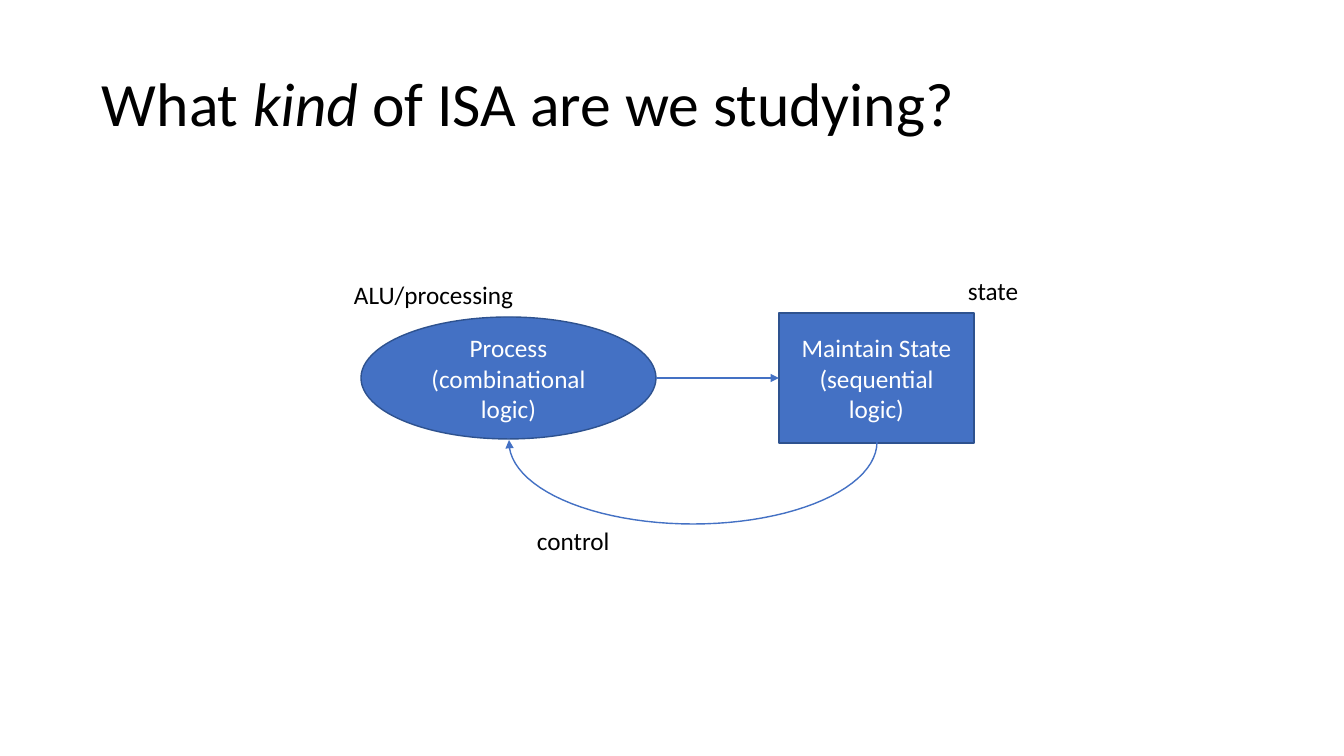
"""Build a slide showing the loop between combinational logic and state."""
import math
from lxml import etree
from pptx import Presentation, util as u
from pptx.dml.color import RGBColor
from pptx.enum import shapes, text
from pptx.oxml.ns import qn

PX = u.Inches(1) / 100.8
BLUE = RGBColor(0x44, 0x71, 0xC4)
NAVY = RGBColor(0x2E, 0x52, 0x8F)
BLACK = RGBColor(0, 0, 0)
WHITE = RGBColor(255, 255, 255)


def px(*lengths):
    return [u.Emu(round(length * PX)) for length in lengths]


def style_arrow(arrow):
    arrow.line.color.rgb = BLUE
    arrow.line.width = u.Pt(1)
    properties = arrow._element.spPr
    etree.SubElement(properties.find(qn("a:ln")), qn("a:tailEnd"), type="triangle")
    etree.SubElement(properties, qn("a:effectLst"))


presentation = Presentation()
presentation.slide_width, presentation.slide_height = px(1344, 756)
slide = presentation.slides.add_slide(presentation.slide_layouts[6])

labels = [
    (102, 64, 1140, 76, 44, [("What ", False), ("kind", True), (" of ISA are we studying?", False)]),
    (354, 278, 165, 33, 18, [("ALU/processing", False)]),
    (968, 274, 60, 33, 18, [("state", False)]),
    (537, 524, 80, 33, 18, [("control", False)]),
]
for left, top, width, height, size, runs in labels:
    box = slide.shapes.add_textbox(*px(left, top, width, height))
    frame = box.text_frame
    frame.word_wrap = True
    frame.margin_left = frame.margin_right = frame.margin_bottom = 0
    frame.margin_top = px(1)[0]
    paragraph = frame.paragraphs[0]
    paragraph.space_before = u.Pt(1)
    paragraph.font.name = "Calibri"
    paragraph.font.size = u.Pt(size)
    paragraph.font.color.rgb = BLACK
    for words, italic in runs:
        run = paragraph.add_run()
        run.text = words
        if italic:
            run.font.italic = True

blocks = [
    (shapes.MSO_SHAPE.OVAL, 361, 317, 295, 122, 26, "Process (combinational logic)"),
    (shapes.MSO_SHAPE.RECTANGLE, 779, 313, 195, 130, 22, "Maintain State (sequential logic)"),
]
for kind, left, top, width, height, margin, words in blocks:
    block = slide.shapes.add_shape(kind, *px(left, top, width, height))
    block.shadow.inherit = False
    block.fill.solid()
    block.fill.fore_color.rgb = BLUE
    block.line.color.rgb = NAVY
    block.line.width = u.Pt(1)
    frame = block.text_frame
    frame.word_wrap = True
    frame.vertical_anchor = text.MSO_ANCHOR.MIDDLE
    frame.margin_left = frame.margin_right = px(margin)[0]
    frame.margin_top = frame.margin_bottom = 0
    paragraph = frame.paragraphs[0]
    paragraph.text = words
    paragraph.alignment = text.PP_ALIGN.CENTER
    paragraph.font.name = "Calibri"
    paragraph.font.size = u.Pt(18)
    paragraph.font.color.rgb = WHITE
state_block = block

process_arrow = slide.shapes.add_connector(
    shapes.MSO_CONNECTOR.STRAIGHT, *px(656, 378, 779, 378))
process_arrow.end_connect(state_block, 1)
style_arrow(process_arrow)

steps = 48
curve = []
for step in range(steps + 1):
    angle = math.pi * step / steps
    curve.append(px(693 + 184 * math.cos(angle), 442 + 82 * math.sin(angle)))
curve[-1] = px(509, 440)
builder = slide.shapes.build_freeform(*curve[0])
builder.add_line_segments(curve[1:], close=False)
control_arrow = builder.convert_to_shape()
control_arrow.fill.background()
style_arrow(control_arrow)

presentation.save("out.pptx")
